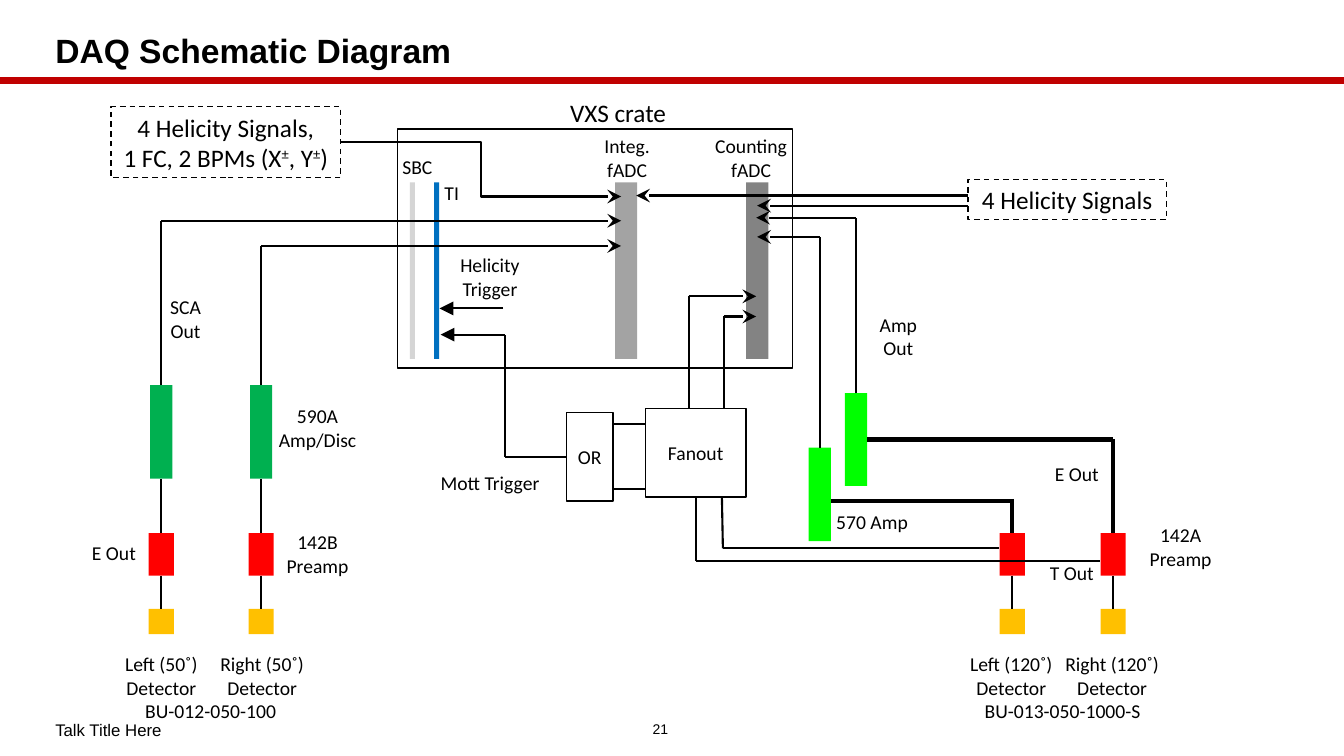
from lxml import etree
from pptx import Presentation
from pptx.dml.color import RGBColor
from pptx.enum.dml import MSO_LINE
from pptx.enum.shapes import MSO_CONNECTOR as Connector, MSO_SHAPE as Shape
from pptx.enum.text import MSO_ANCHOR as Anchor, PP_ALIGN as Align
from pptx.oxml.ns import qn
from pptx.util import Inches, Pt

COLORS = {
    "black": "000000", "rule": "C00000", "detector": "FFC000", "preamp": "FF0000",
    "590A": "00B050", "570": "00FF00", "SBC": "D5D5D5", "TI": "0070C0",
    "integrating": "A3A3A3", "counting": "838383",
}

# Centre of each detector column
LEFT_50, RIGHT_50, LEFT_120, RIGHT_120 = 1.6, 2.59, 10.04, 11.04
COLUMNS = (LEFT_50, RIGHT_50, LEFT_120, RIGHT_120)

# Parts: colour, centre x, top, width, height
PARTS = [
    ("SBC", 4.09, 1.81, 0.05, 1.75),
    ("TI", 4.33, 1.81, 0.05, 1.75),
    ("integrating", 6.21, 1.81, 0.22, 1.75),
    ("counting", 7.51, 1.81, 0.22, 1.75),
    ("570", 8.49, 3.9, 0.22, 0.92),
    ("570", 8.13, 4.44, 0.22, 0.93),
]
PARTS += [("590A", x, 3.82, 0.22, 0.93) for x in (LEFT_50, RIGHT_50)]
PARTS += [("preamp", x, 5.29, 0.25, 0.42) for x in COLUMNS]
PARTS += [("detector", x, 6.04, 0.25, 0.25) for x in COLUMNS]

# Outlined boxes: left, top, width, height, text lines, size, dashed
BOXES = [
    (3.94, 1.28, 3.92, 2.37, [], 14, False),
    (6.4, 4.05, 1, 0.88, ["Fanout"], 14, False),
    (5.62, 4.09, 0.46, 0.88, ["OR"], 14, False),
    (9.6, 1.78, 1.97, 0.4, ["4 Helicity Signals"], 18, True),
    (1.1, 1.06, 2.28, 0.7, ["4 Helicity Signals,", "1 FC, 2 BPMs (X^±^, Y^±^)"], 18, True),
]

# Labels: centre x, top, text lines, size
LABELS = [
    (6.13, 0.92, ["VXS crate"], 18),
    (4.14, 1.49, ["SBC"], 14),
    (4.48, 1.75, ["TI"], 14),
    (6.22, 1.28, ["Integ.", "fADC"], 14),
    (7.45, 1.28, ["Counting", "fADC"], 14),
    (4.86, 2.46, ["Helicity", "Trigger"], 14),
    (4.86, 4.62, ["Mott Trigger"], 14),
    (1.84, 2.88, ["SCA", "Out"], 14),
    (3.15, 3.96, ["590A", "Amp/Disc"], 14),
    (1.13, 5.32, ["E Out"], 14),
    (3.15, 5.21, ["142B", "Preamp"], 14),
    (1.6, 6.42, ["Left (50˚)", "Detector"], 14),
    (2.6, 6.42, ["Right (50˚)", "Detector"], 14),
    (2.09, 6.88, ["BU-012-050-100"], 14),
    (8.91, 3.05, ["Amp", "Out"], 14),
    (8.65, 5.01, ["570 Amp"], 14),
    (10.68, 4.53, ["E Out"], 14),
    (10.63, 5.52, ["T Out"], 14),
    (11.71, 5.14, ["142A", "Preamp"], 14),
    (10.03, 6.42, ["Left (120˚)", "Detector"], 14),
    (11.03, 6.42, ["Right (120˚)", "Detector"], 14),
    (10.54, 6.88, ["BU-013-050-1000-S"], 14),
]

# Wires: start, end, width, arrowhead at the end
WIRES = [((x, 5.71), (x, 6.04), 1.5, None) for x in COLUMNS]
WIRES += [((x, 4.75), (x, 5.29), 1.5, None) for x in (LEFT_50, RIGHT_50)]
WIRES += [
    ((LEFT_50, 3.82), (LEFT_50, 2.19), 1.5, None),
    ((LEFT_50, 2.19), (6.16, 2.19), 1.5, "stealth"),
    ((RIGHT_50, 3.82), (RIGHT_50, 2.44), 1.5, None),
    ((RIGHT_50, 2.44), (6.16, 2.44), 1.5, "stealth"),
    ((9.6, 1.94), (6.31, 1.94), 1.5, "stealth"),
    ((9.6, 2.04), (7.51, 2.04), 1.5, "stealth"),
    ((8.49, 3.9), (8.49, 2.16), 1.5, None),
    ((8.49, 2.16), (7.5, 2.16), 1.5, "stealth"),
    ((8.13, 4.44), (8.13, 2.35), 1.5, None),
    ((8.13, 2.35), (7.51, 2.35), 1.5, "stealth"),
    ((8.6, 4.36), (RIGHT_120, 4.36), 3, None),
    ((RIGHT_120, 4.36), (RIGHT_120, 5.29), 3, None),
    ((8.24, 4.97), (LEFT_120, 4.97), 3, None),
    ((LEFT_120, 4.95), (LEFT_120, 5.29), 3, None),
    ((6.83, 4.05), (6.83, 2.94), 1.5, None),
    ((6.83, 2.94), (7.5, 2.94), 1.5, "stealth"),
    ((7.18, 4.05), (7.18, 3.14), 1.5, None),
    ((7.18, 3.14), (7.5, 3.14), 1.5, "stealth"),
    ((6.9, 4.93), (6.9, 5.57), 1.5, None),
    ((6.9, 5.57), (10.91, 5.57), 1.5, None),
    ((7.16, 4.93), (7.17, 5.44), 1.5, None),
    ((7.17, 5.44), (9.91, 5.44), 1.5, None),
    ((6.08, 4.21), (6.4, 4.21), 1.5, None),
    ((6.08, 4.85), (6.4, 4.85), 1.5, None),
    ((5.62, 4.53), (5.01, 4.53), 1.5, None),
    ((5.01, 4.53), (5.01, 3.32), 1.5, None),
    ((5.01, 3.32), (4.37, 3.32), 1.5, "triangle"),
    ((4.99, 3.06), (4.36, 3.06), 1.5, "triangle"),
]
BENT_WIRE = ((3.38, 1.41), (6.16, 1.95), 1.5, "stealth")

presentation = Presentation()
presentation.slide_width, presentation.slide_height = Inches(13.33), Inches(7.5)
slide = presentation.slides.add_slide(presentation.slide_layouts[6])
rectangles = []


def color(name):
    return RGBColor.from_string(COLORS[name])


def write(frame, lines, size, font="Calibri", align=Align.CENTER, bold=False, spacing=None):
    """Fill a text frame; text between carets is superscript."""
    for index, line in enumerate(lines):
        paragraph = frame.add_paragraph() if index else frame.paragraphs[0]
        paragraph.alignment = align
        paragraph.line_spacing = spacing
        for part, text in enumerate(line.split("^")):
            run = paragraph.add_run()
            run.text = text
            run.font.size, run.font.name, run.font.bold = Pt(size), font, bold
            run.font.color.rgb = color("black")
            if part % 2:
                run.font._element.set("baseline", "30000")


def add_rectangle(left, top, width, height, fill=None):
    shape = slide.shapes.add_shape(
        Shape.RECTANGLE, Inches(left), Inches(top), Inches(width), Inches(height))
    shape.shadow.inherit = False
    if fill:
        shape.fill.solid()
        shape.fill.fore_color.rgb = color(fill)
        shape.line.fill.background()
    else:
        shape.fill.background()
        shape.line.color.rgb = color("black")
        shape.line.width = Pt(1)
    rectangles.append((shape, (left, top, width, height)))
    return shape


def find_side(point):
    """Return the rectangle and side whose middle lies at the point, if any."""
    for shape, (left, top, width, height) in rectangles:
        middle_x, middle_y = left + width / 2, top + height / 2
        sides = ((middle_x, top), (left, middle_y),
                 (middle_x, top + height), (left + width, middle_y))
        for side, (x, y) in enumerate(sides):
            if abs(x - point[0]) < 0.015 and abs(y - point[1]) < 0.015:
                return shape, side
    return None


def add_wire(start, end, width, arrowhead=None, kind=Connector.STRAIGHT, line_color="black"):
    wire = slide.shapes.add_connector(kind, *(Inches(value) for value in start + end))
    wire.line.color.rgb = color(line_color)
    wire.line.width = Pt(width)
    for point, connect in ((start, wire.begin_connect), (end, wire.end_connect)):
        target = find_side(point)
        if target:
            connect(*target)
    if arrowhead:
        etree.SubElement(wire.line._get_or_add_ln(), qn("a:tailEnd"),
                         type=arrowhead, w="lg", len="lg")
    etree.SubElement(wire._element.spPr, qn("a:effectLst"))


def add_text(left, top, width, height, lines, size, wrap=False, anchor=Anchor.TOP, **style):
    box = slide.shapes.add_textbox(Inches(left), Inches(top), Inches(width), Inches(height))
    box.text_frame.word_wrap = wrap
    box.text_frame.vertical_anchor = anchor
    write(box.text_frame, lines, size, **style)


add_wire((0, 0.8), (13.33, 0.8), 4.5, line_color="rule")
arial = {"font": "Arial", "wrap": True, "anchor": Anchor.MIDDLE}
add_text(0.45, 0.26, 12.34, 0.53, ["DAQ Schematic Diagram"], 24,
         align=Align.LEFT, bold=True, spacing=0.9, **arial)
add_text(0.45, 7.07, 5.71, 0.34, ["Talk Title Here"], 12, align=Align.LEFT, **arial)
add_text(6.16, 7.07, 0.78, 0.33, ["21"], 10, **arial)

for fill, center, top, width, height in PARTS:
    add_rectangle(center - width / 2, top, width, height, fill)

for left, top, width, height, lines, size, dashed in BOXES:
    box = add_rectangle(left, top, width, height)
    if dashed:
        box.line.dash_style = MSO_LINE.DASH
    box.text_frame.word_wrap = False
    box.text_frame.vertical_anchor = Anchor.MIDDLE
    write(box.text_frame, lines, size)

for wire in WIRES:
    add_wire(*wire)
add_wire(*BENT_WIRE, kind=Connector.ELBOW)

for center, top, lines, size in LABELS:
    width = 0.3 + max(map(len, lines)) * size * 0.0067
    height = 0.1 + len(lines) * size * 0.017
    add_text(center - width / 2, top, width, height, lines, size)

presentation.save("out.pptx")
